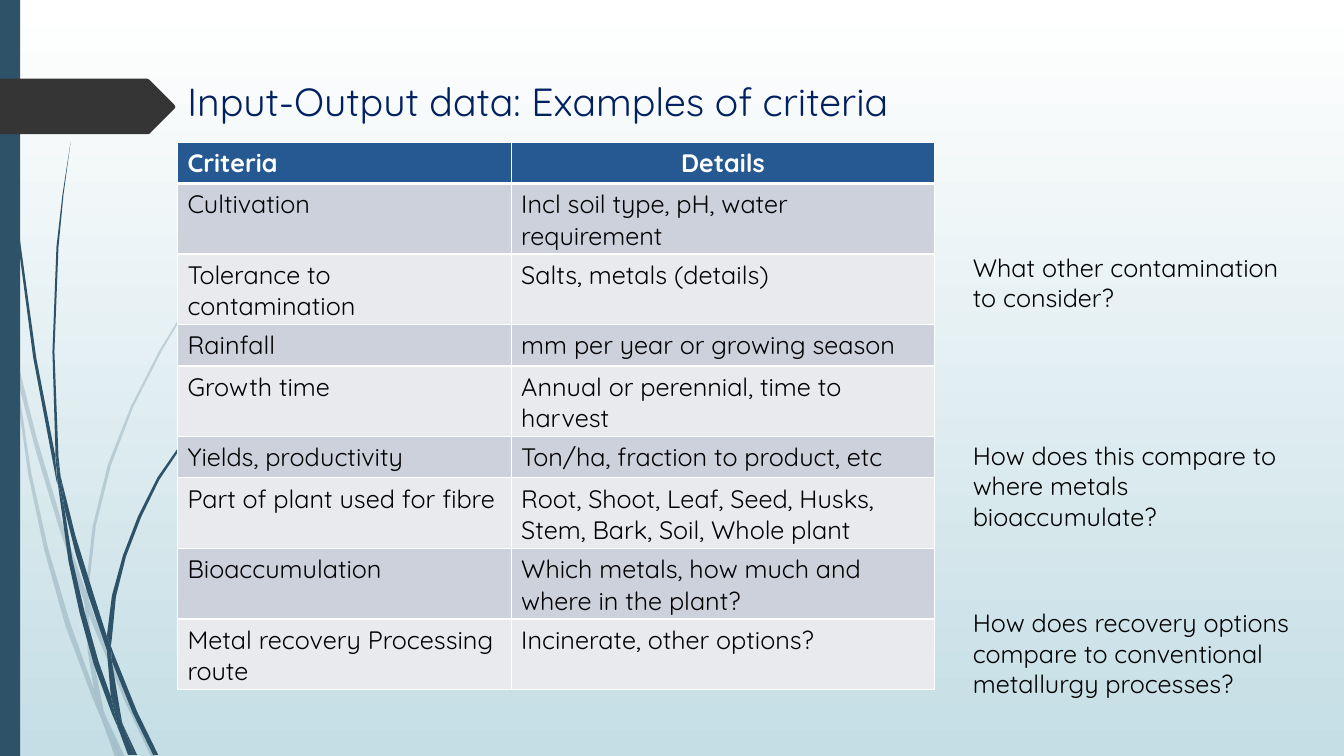
"""Builds the slide on criteria for input-output data."""
from dataclasses import dataclass

from lxml import etree
from pptx import Presentation
from pptx import util as u
from pptx.dml.color import RGBColor
from pptx.enum import shapes, text
from pptx.oxml.ns import qn


@dataclass(frozen=True)
class Theme:
    """Colours, typeface and type sizes of the slide."""
    font: str = "Quicksand"
    title_size: int = 28
    body_size: int = 18
    navy: str = "002060"
    teal: str = "2E5369"
    charcoal: str = "353535"
    header: str = "265991"
    bands: tuple = ("CDD1DC", "E8EAEE")
    white: str = "FFFFFF"
    black: str = "000000"
    sky: str = "C5DEE5"


THEME = Theme()

CRITERIA = [
    ("Criteria", "Details"),
    ("Cultivation", "Incl soil type, pH, water requirement"),
    ("Tolerance to contamination", "Salts, metals (details)"),
    ("Rainfall", "mm per year or growing season"),
    ("Growth time", "Annual or perennial, time to harvest"),
    ("Yields, productivity", "Ton/ha, fraction to product, etc"),
    ("Part of plant used for fibre", "Root, Shoot, Leaf, Seed, Husks, Stem, Bark, Soil, Whole plant"),
    ("Bioaccumulation", "Which metals, how much and where in the plant?"),
    ("Metal recovery Processing route", "Incinerate, other options?"),
]

QUESTIONS = [
    (4.32, 3.31, 1.01, "How does this compare to where metals bioaccumulate?"),
    (5.98, 3.73, 1.01, "How does recovery options compare to conventional metallurgy processes?"),
    (2.45, 3.45, 0.71, "What other contamination to consider?"),
]

FAINT_STEMS = [
    [(0.11, 3.5), (0.09, 3.22), (0, 2.82), (0, 2.99), (0.1, 3.44)],
    [(0.58, 5.22), (0.84, 5.99), (0.85, 5.86), (0.62, 5.2), (0.36, 4.33), (0.14, 3.45),
     (0.17, 3.76), (0.36, 4.49)],
    [(0.92, 6.07), (0.88, 5.96), (0.88, 6.1), (1.23, 6.94), (1.5, 7.51), (1.55, 7.51), (1.27, 6.92)],
    [(1.19, 7.51), (1.24, 7.51), (1.05, 7.11)],
    [(0.93, 6.83), (0.7, 6.19), (0.48, 5.45), (0.31, 4.69), (0.17, 3.76), (0.11, 3.5),
     (0.28, 4.7), (0.44, 5.46), (0.65, 6.21), (0.92, 6.93), (1.01, 7.14), (0.99, 7.07)],
    [(0.84, 5.99), (0.87, 6.46), (0.93, 6.83), (0.96, 6.92), (1.05, 7.11), (1.03, 7.06),
     (0.91, 6.46), (0.88, 6.1), (0.88, 6.08)],
    [(0.88, 5.84), (0.95, 5.22), (1.1, 4.62), (1.32, 4.04), (1.6, 3.49), (1.92, 2.95),
     (2.29, 2.45), (2.68, 1.98), (3.12, 1.54), (3.12, 1.53), (2.68, 1.97), (2.28, 2.44),
     (1.91, 2.94), (1.58, 3.48), (1.3, 4.03), (1.07, 4.61), (0.92, 5.22), (0.85, 5.84),
     (0.85, 5.86), (0.88, 5.96)],
    [(1.01, 7.14), (1.14, 7.51), (1.19, 7.51)],
    [(0.88, 6.08), (0.88, 6.1), (0.88, 5.96), (0.85, 5.86), (0.84, 5.99)],
    [(0.96, 6.92), (0.93, 6.83), (0.99, 7.07), (1.01, 7.14), (1.19, 7.51), (1.05, 7.11)],
]
DARK_STEMS = [
    [(0.07, 1.1), (0.17, 2.33), (0.33, 3.55), (0.56, 4.77), (0.57, 4.81), (0.55, 4.57),
     (0.55, 4.53), (0.36, 3.55), (0.19, 2.32), (0.08, 1.09), (0.04, 0), (0.03, 0), (0.04, 0.48)],
    [(0.88, 5.92), (1.06, 6.45), (1.06, 6.31), (0.93, 5.9), (0.75, 5.32), (0.6, 4.72),
     (0.64, 5.05), (0.75, 5.49)],
    [(1.13, 6.49), (1.1, 6.41), (1.11, 6.56), (1.32, 7.08), (1.52, 7.49), (1.57, 7.49), (1.36, 7.06)],
    [(1.1, 6.91), (0.98, 6.57), (0.84, 6.07), (0.72, 5.56), (0.64, 5.05), (0.57, 4.77),
     (0.68, 5.57), (0.79, 6.08), (0.93, 6.59), (1.11, 7.08), (1.17, 7.22), (1.16, 7.17)],
    [(0.6, 4.72), (0.58, 4.53), (0.54, 3.49), (0.58, 2.45), (0.63, 1.93), (0.7, 1.41),
     (0.62, 1.93), (0.56, 2.45), (0.52, 3.49), (0.55, 4.49)],
    [(1.33, 7.49), (1.36, 7.49), (1.22, 7.19)],
    [(0.57, 4.77), (0.64, 5.05), (0.6, 4.72), (0.55, 4.49), (0.55, 4.53)],
    [(1.11, 6.33), (1.15, 5.92), (1.25, 5.52), (1.4, 5.13), (1.58, 4.76), (2.05, 4.06),
     (2.31, 3.74), (2.61, 3.44), (2.6, 3.44), (2.31, 3.73), (2.04, 4.05), (1.56, 4.74),
     (1.37, 5.12), (1.22, 5.51), (1.11, 5.91), (1.06, 6.31), (1.1, 6.41)],
    [(1.17, 7.22), (1.27, 7.49), (1.31, 7.49)],
    [(1.06, 6.45), (1.1, 6.91), (1.16, 7.06), (1.22, 7.19), (1.21, 7.16), (1.11, 6.56), (1.09, 6.51)],
    [(1.06, 6.45), (1.09, 6.51), (1.11, 6.56), (1.1, 6.41), (1.06, 6.31)],
    [(1.16, 7.06), (1.1, 6.91), (1.16, 7.17), (1.17, 7.22), (1.3, 7.49), (1.33, 7.49), (1.22, 7.19)],
]
TITLE_TAG = [(1.73, 1.08), (1.48, 1.33), (1.46, 1.33), (0, 1.33), (0, 0.78), (1.46, 0.78),
             (1.48, 0.79), (1.73, 1.04), (1.74, 1.06)]


def paint(part, colour, opacity=None):
    """Give a shape a flat fill without outline or shadow."""
    part.shadow.inherit = False
    part.fill.solid()
    part.fill.fore_color.rgb = RGBColor.from_string(colour)
    part.line.fill.background()
    if opacity is not None:
        tint = part.fill._xPr.find(".//" + qn("a:srgbClr"))
        etree.SubElement(tint, qn("a:alpha"), val=str(opacity * 1000))


def write(frame, words, size=THEME.body_size, colour=THEME.black, bold=False,
          align=text.PP_ALIGN.LEFT):
    """Put formatted words in a text frame."""
    frame.word_wrap = True
    paragraph = frame.paragraphs[0]
    paragraph.alignment = align
    run = paragraph.add_run()
    run.text = words
    run.font.name = THEME.font
    run.font.size = u.Pt(size)
    run.font.bold = bold
    run.font.color.rgb = RGBColor.from_string(colour)


def add_words(slide, left, top, width, height, words, **style):
    """Add a text box that grows with its words."""
    box = slide.shapes.add_textbox(*map(u.Inches, (left, top, width, height)))
    write(box.text_frame, words, **style)
    box.text_frame.auto_size = text.MSO_AUTO_SIZE.SHAPE_TO_FIT_TEXT


def add_outline(slide, corners, colour, opacity=None):
    """Add a filled outline through the corners."""
    start, *others = [(u.Inches(x), u.Inches(y)) for x, y in corners]
    builder = slide.shapes.build_freeform(*start)
    builder.add_line_segments(others, close=True)
    paint(builder.convert_to_shape(), colour, opacity)


def add_borders(cell, **weights):
    """Draw white cell borders with weights in points by side."""
    properties = cell._tc.get_or_add_tcPr()
    for position, (side, points) in enumerate(weights.items()):
        border = etree.Element(qn("a:ln" + side), w=str(u.Pt(points)))
        fill = etree.SubElement(border, qn("a:solidFill"))
        etree.SubElement(fill, qn("a:srgbClr"), val=THEME.white)
        properties.insert(position, border)


def add_criteria(slide):
    """Add the banded table of criteria."""
    frame = slide.shapes.add_table(
        len(CRITERIA), 2, *map(u.Inches, (1.76, 1.41, 7.51, 5.42)))
    table = frame.table
    for column, width in zip(table.columns, (3.31, 4.2)):
        column.width = u.Inches(width)
    for i, entries in enumerate(CRITERIA):
        table.rows[i].height = u.Inches(0.41)
        heading = i == 0
        for j, words in enumerate(entries):
            cell = table.cell(i, j)
            centred = heading and j == 1
            write(cell.text_frame, words, bold=heading,
                  colour=THEME.white if heading else THEME.black,
                  align=text.PP_ALIGN.CENTER if centred else text.PP_ALIGN.LEFT)
            cell.fill.solid()
            cell.fill.fore_color.rgb = RGBColor.from_string(
                THEME.header if heading else THEME.bands[(i - 1) % 2])
            add_borders(cell, L=1, R=1, T=3 if i == 1 else 1, B=3 if heading else 1)
    frame.height = u.Inches(5.42)


def add_backdrop(slide):
    """Add the sky gradient, the stems, the side bar and the title tag."""
    sky = slide.background.fill
    sky.gradient()
    sky.gradient_angle = 270
    for stop, colour in zip(sky.gradient_stops, (THEME.white, THEME.sky)):
        stop.color.rgb = RGBColor.from_string(colour)
    for stem in FAINT_STEMS:
        add_outline(slide, stem, THEME.teal, opacity=20)
    for stem in DARK_STEMS:
        add_outline(slide, stem, THEME.teal)
    bar = slide.shapes.add_shape(
        shapes.MSO_SHAPE.RECTANGLE, *map(u.Inches, (0, 0, 0.2, 7.5)))
    paint(bar, THEME.teal)
    add_outline(slide, TITLE_TAG, THEME.charcoal)


def main():
    """Build and save the slide."""
    deck = Presentation()
    deck.slide_width, deck.slide_height = u.Inches(13.33), u.Inches(7.5)
    slide = deck.slides.add_slide(deck.slide_layouts[6])
    add_backdrop(slide)
    add_words(slide, 1.76, 0.72, 10.68, 0.57, "Input-Output data: Examples of criteria",
              size=THEME.title_size, colour=THEME.navy)
    add_criteria(slide)
    for top, width, height, question in QUESTIONS:
        add_words(slide, 9.55, top, width, height, question)
    deck.save("out.pptx")


if __name__ == "__main__":
    main()
